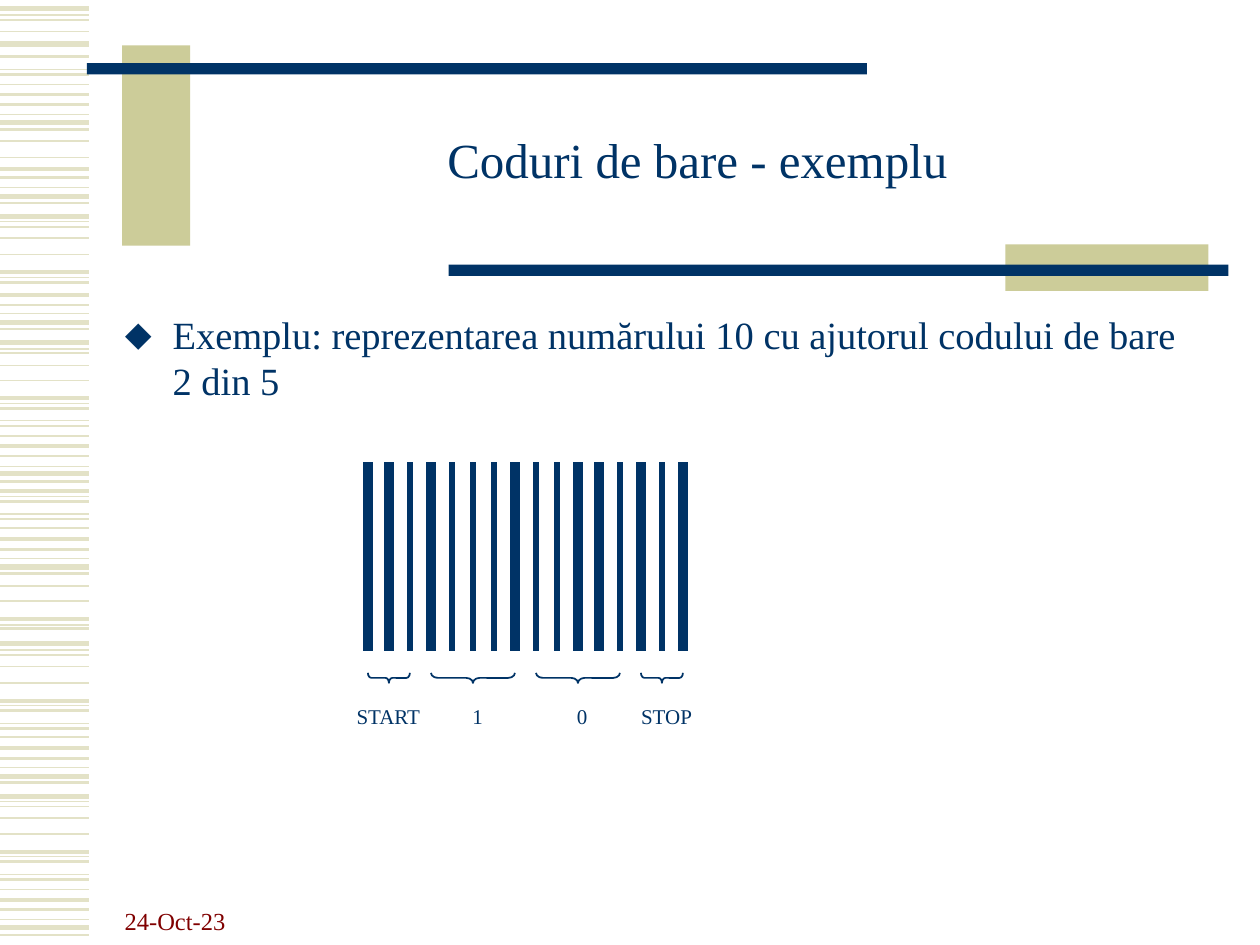
from dataclasses import dataclass
from lxml.etree import SubElement
from pptx import Presentation
from pptx.dml.color import RGBColor
from pptx.enum.shapes import MSO_CONNECTOR, MSO_SHAPE
from pptx.enum.text import MSO_ANCHOR, MSO_AUTO_SIZE, PP_ALIGN
from pptx.oxml.ns import qn
from pptx.util import Inches, Pt


@dataclass(frozen=True)
class Theme:
    font: str = "Times New Roman"
    navy: str = "003366"
    olive: str = "CCCC99"
    stripe: str = "E3E2C7"
    maroon: str = "800000"
    title: int = 28
    body: int = 22
    date: int = 14
    label: int = 12


theme = Theme()


def add_line(s, x1, y1, x2, y2, color, weight):
    line = s.shapes.add_connector(
        MSO_CONNECTOR.STRAIGHT, Inches(x1), Inches(y1), Inches(x2), Inches(y2))
    line.line.color.rgb = RGBColor.from_string(color)
    line.line.width = Pt(weight)
    SubElement(line._element.spPr, qn("a:effectLst"))


def write(sp, text, size, color, align, anchor):
    tf = sp.text_frame
    tf.word_wrap = True
    tf.auto_size = MSO_AUTO_SIZE.NONE
    tf.vertical_anchor = anchor
    p = tf.paragraphs[0]
    p.alignment = align
    r = p.add_run()
    r.text = text
    r.font.name = theme.font
    r.font.size = Pt(size)
    r.font.color.rgb = RGBColor.from_string(color)
    return p


prs = Presentation()
prs.slide_width, prs.slide_height = Inches(10), Inches(7.5)
s = prs.slides.add_slide(prs.slide_layouts[1])

stripes = {
    0.75: [0.12, 0.55, 0.91, 1.49, 1.76, 2.2, 2.49, 2.77, 3.2, 3.34, 3.7, 3.94,
           4.08, 4.43, 4.96, 5.16, 5.6, 5.74, 6.09, 6.36, 6.8, 6.94, 7.3],
    1: [0.16, 0.25, 0.67, 1.12, 1.25, 1.8, 1.89, 2.02, 2.8, 2.9, 3.02, 3.46,
        4.19, 4.65, 4.77, 5.2, 5.29, 5.42, 5.85, 6.4, 6.49, 6.62, 7.06],
    1.5: [0.45, 0.59, 0.83, 1.03, 1.41, 1.61, 2.24, 2.42, 2.61, 3.24, 3.38,
          3.62, 3.82, 3.98, 4.12, 4.36, 4.55, 4.99, 5.64, 5.78, 6.02, 6.21,
          6.84, 6.98, 7.22, 7.42],
    2.25: [0.75, 1.34, 2.16, 2.34, 3.16, 3.54, 3.9, 4.28, 4.91, 5.56, 5.94,
           6.76, 7.14],
    3: [0.07, 0.35, 0.97, 1.56, 1.72, 2.56, 2.72, 3.76, 4.5, 5.11, 6.16, 6.32,
        7.36],
}
for weight, heights in stripes.items():
    for y in heights:
        add_line(s, 0, y, 0.71, y, theme.stripe, weight)

for x, y, w, h, color in [
    (0.97, 0.36, 0.54, 1.59, theme.olive),
    (0.69, 0.5, 6.19, 0.09, theme.navy),
    (7.98, 1.94, 1.61, 0.37, theme.olive),
    (3.56, 2.1, 6.19, 0.09, theme.navy),
]:
    sp = s.shapes.add_shape(
        MSO_SHAPE.RECTANGLE, Inches(x), Inches(y), Inches(w), Inches(h))
    sp.shadow.inherit = False
    sp.fill.solid()
    sp.fill.fore_color.rgb = RGBColor.from_string(color)
    sp.line.fill.background()

title = s.shapes.title
title.left, title.top = Inches(1.5), Inches(0.67)
title.width, title.height = Inches(8.07), Inches(1.25)
p = write(title, "Coduri de bare - exemplu", theme.title, theme.navy,
          PP_ALIGN.CENTER, MSO_ANCHOR.MIDDLE)
p.line_spacing = 0.85

body = s.placeholders[1]
body.left, body.top = Inches(0.89), Inches(2.42)
body.width, body.height = Inches(8.7), Inches(4.24)
p = write(body,
          "Exemplu: reprezentarea numărului 10 cu ajutorul codului de bare 2 din 5",
          theme.body, theme.navy, PP_ALIGN.LEFT, MSO_ANCHOR.TOP)
pPr = p._p.get_or_add_pPr()
pPr.set("marL", str(Inches(0.38)))
pPr.set("indent", str(Inches(-0.38)))
SubElement(SubElement(pPr, qn("a:buClr")), qn("a:srgbClr")).set("val", theme.navy)
SubElement(pPr, qn("a:buChar")).set("char", "⬥")

date = s.shapes.add_textbox(Inches(0.89), Inches(6.97), Inches(2.08), Inches(0.5))
write(date, "24-Oct-23", theme.date, theme.maroon, PP_ALIGN.LEFT, MSO_ANCHOR.BOTTOM)

bar_x = [2.92 + i / 6 for i in range(16)]
for x, kind in zip(bar_x, "WWNWNNNWNNWWNWNW"):
    add_line(s, x, 3.67, x, 5.17, theme.navy, 6 if kind == "W" else 3)

for text, first, last, x, align in [
    ("START", 0, 2, 2.83, PP_ALIGN.LEFT),
    ("1", 3, 7, 3.5, PP_ALIGN.CENTER),
    ("0", 8, 12, 4.33, PP_ALIGN.CENTER),
    ("STOP", 13, 15, 5, PP_ALIGN.CENTER),
]:
    span = bar_x[last] - bar_x[first]
    center = (bar_x[first] + bar_x[last]) / 2
    brace = s.shapes.add_shape(
        MSO_SHAPE.RIGHT_BRACE, Inches(center - 0.04), Inches(5.38 - span / 2),
        Inches(0.08), Inches(span))
    brace.rotation = 90
    brace.adjustments[0] = span
    brace.adjustments[1] = 0.5
    brace.shadow.inherit = False
    brace.fill.background()
    brace.line.color.rgb = RGBColor.from_string(theme.navy)
    brace.line.width = Pt(1)
    label = s.shapes.add_textbox(Inches(x), Inches(5.58), Inches(0.58), Inches(0.2))
    tf = label.text_frame
    tf.margin_left = tf.margin_right = tf.margin_top = tf.margin_bottom = 0
    write(label, text, theme.label, theme.navy, align, MSO_ANCHOR.TOP)

prs.save("out.pptx")
